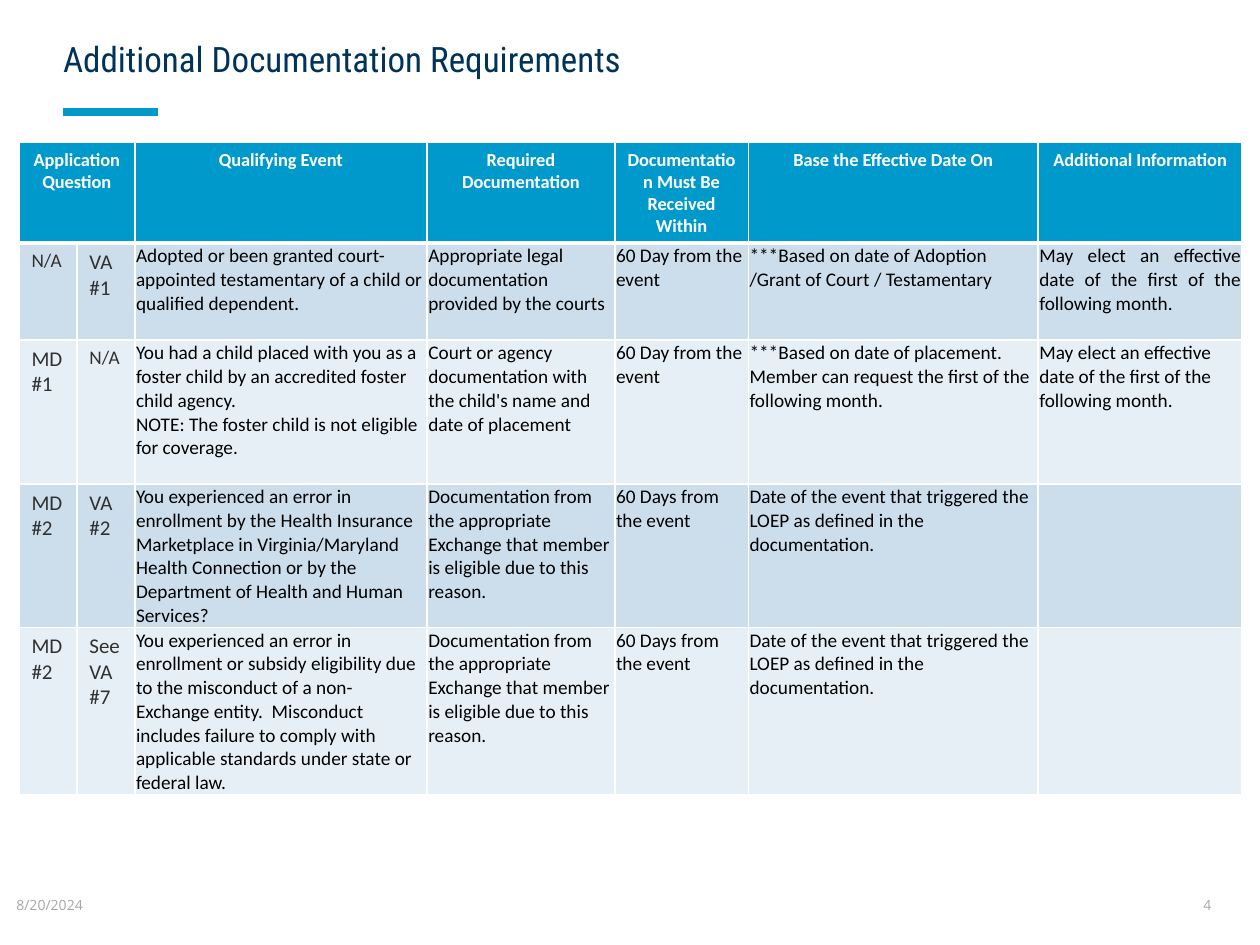
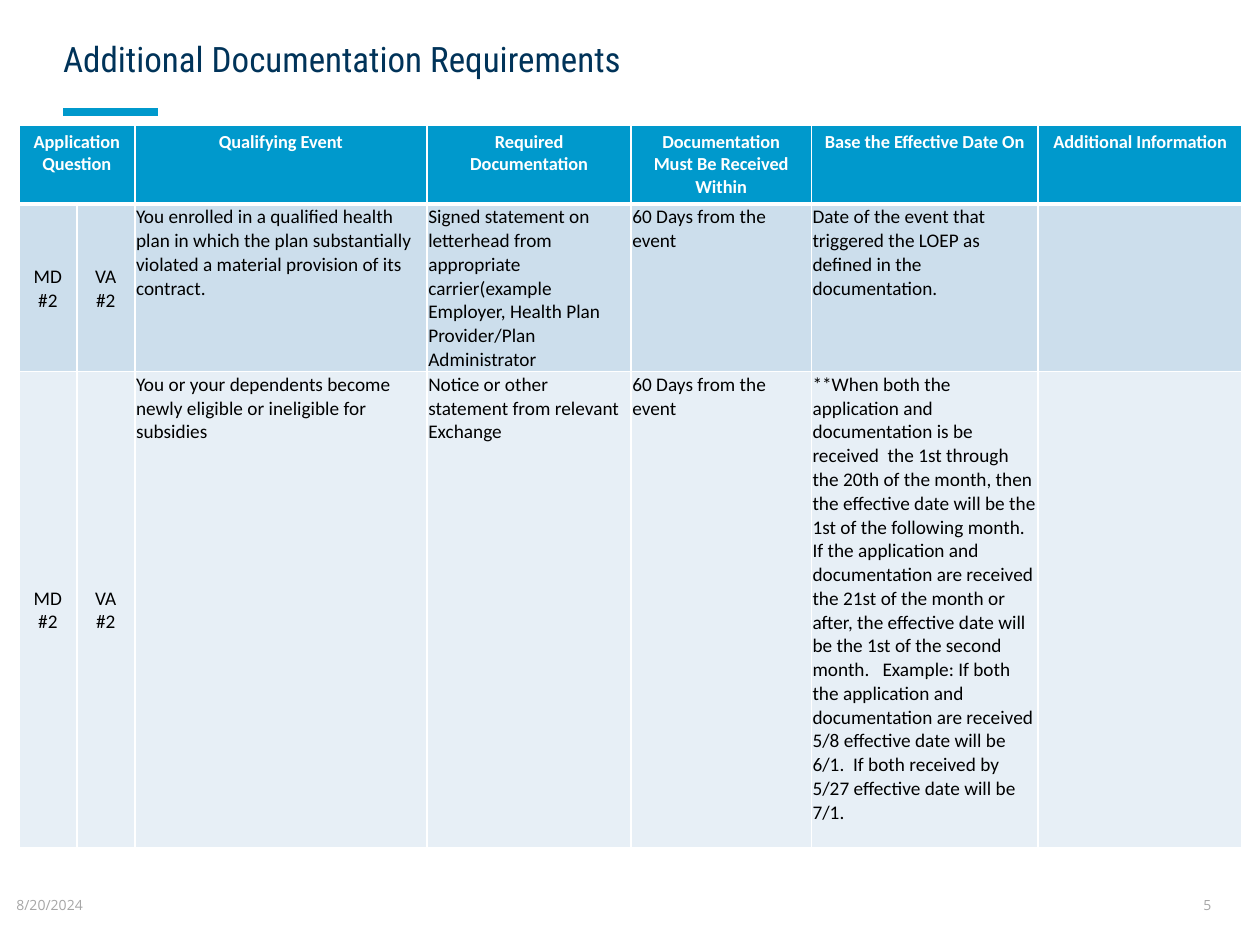
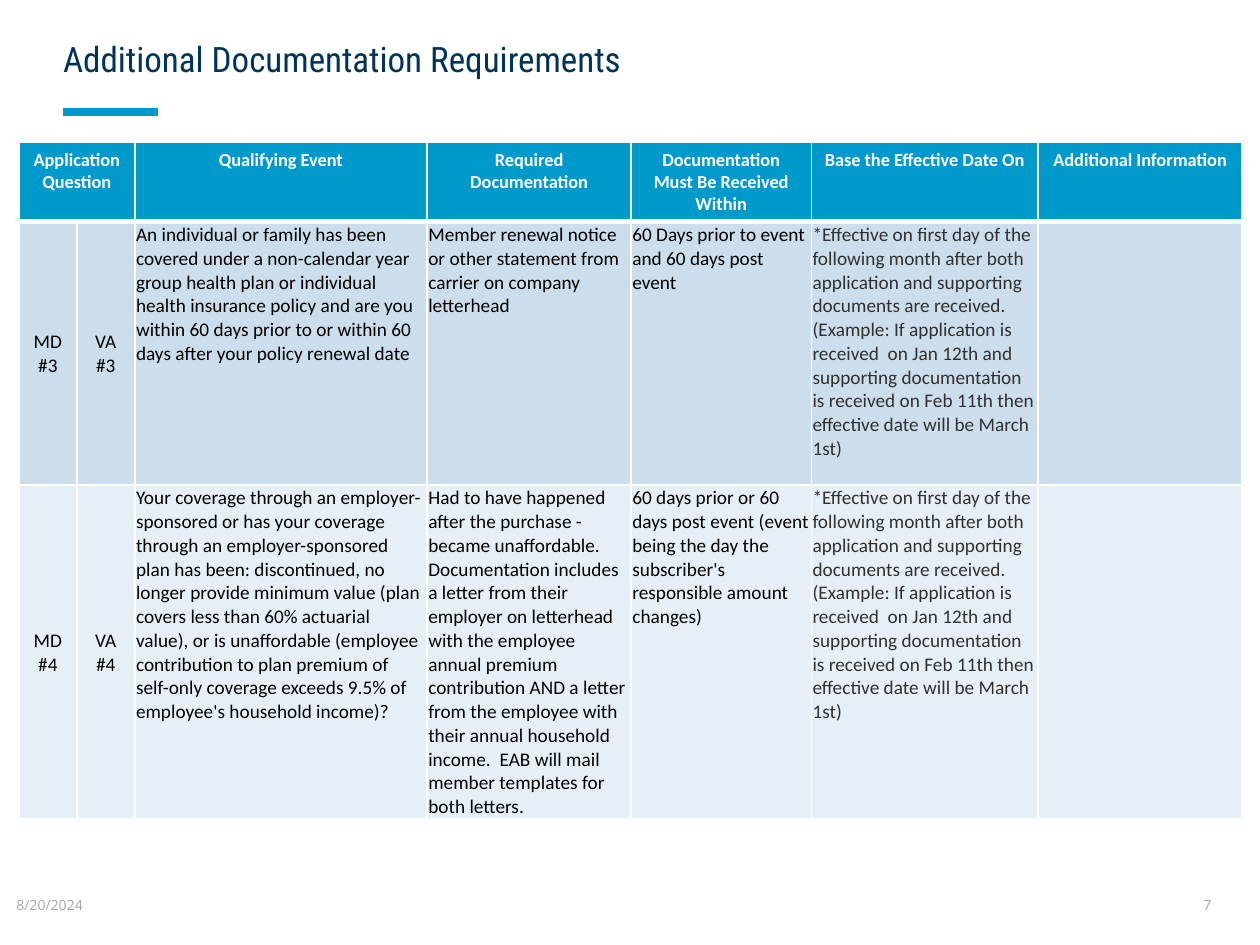
"""Build the three documentation requirement slides."""
from dataclasses import dataclass
from typing import NamedTuple, Optional

from lxml.etree import SubElement
from pptx import Presentation
from pptx.dml.color import RGBColor
from pptx.enum.shapes import MSO_CONNECTOR
from pptx.enum.text import MSO_ANCHOR as ANCHOR, MSO_AUTO_SIZE, PP_ALIGN as ALIGN
from pptx.oxml.ns import qn
from pptx.util import Inches, Pt

WHITE = RGBColor(0xFF, 0xFF, 0xFF)
BLACK = RGBColor(0x00, 0x00, 0x00)
CHARCOAL = RGBColor(0x30, 0x30, 0x30)
GREY = RGBColor(0xA6, 0xA6, 0xA6)
NAVY = RGBColor(0x00, 0x33, 0x59)
BLUE = RGBColor(0x00, 0x99, 0xCC)
BANDS = (RGBColor(0xCC, 0xDE, 0xEC), RGBColor(0xE7, 0xEF, 0xF6))

TITLE = "Additional Documentation Requirements"
DATE = "8/20/2024"
HEADINGS = ("Application Question", "", "Qualifying Event", "Required Documentation",
            "Documentation Must Be Received Within", "Base the Effective Date On",
            "Additional Information")
TABLE_LEFT = 0.15


@dataclass(frozen=True)
class Style:
    """Look of the text in a table cell."""
    size: float = 11
    color: RGBColor = BLACK
    bold: bool = False
    align: ALIGN = ALIGN.LEFT
    anchor: ANCHOR = ANCHOR.TOP
    tight: bool = True


HEADER = Style(10.5, WHITE, True, ALIGN.CENTER, tight=False)
BODY = Style()
NOTE = Style(color=CHARCOAL)
JUSTIFIED = Style(align=ALIGN.JUSTIFY)
CODE = Style(12, CHARCOAL, tight=False)
SMALL_CODE = Style(11, CHARCOAL, tight=False)
CENTRED_CODE = Style(align=ALIGN.CENTER, anchor=ANCHOR.MIDDLE)


class Entry(NamedTuple):
    """Cell text with its own style, or the style of its column."""
    text: str
    style: Optional[Style] = None


class Sheet(NamedTuple):
    """One slide: page number, table geometry in inches and entries."""
    number: int
    top: float
    widths: tuple[float, ...]
    heights: tuple[float, ...]
    code_style: Style
    rows: tuple[tuple[Entry, ...], ...]


def row(*items: str | Entry) -> tuple[Entry, ...]:
    """Turn plain strings into entries."""
    return tuple(i if isinstance(i, Entry) else Entry(i) for i in items)


NOT_APPLICABLE = Entry("N/A", SMALL_CODE)
EXCHANGE_PROOF = "Documentation from the appropriate Exchange that member is eligible due to this reason."
TRIGGER_DATE = "Date of the event that triggered the LOEP as defined in the documentation."
NEXT_MONTH = "May elect an effective date of the first of the following month."
SIXTY_DAY = "60 Day from the event"
SIXTY_DAYS = "60 Days from the event"
BOTH_RECEIVED = Entry(
    "*Effective on first day of the following month after both application and supporting "
    "documents are received. (Example: If application is received  on Jan 12th and supporting "
    "documentation is received on Feb 11th then effective date will be March 1st)", NOTE)

WIDE_DATE = (0.46, 0.46, 2.32, 1.49, 1.06, 2.3, 1.62)
EVEN = (0.46, 0.46, 2.32, 1.62, 1.43, 1.8, 1.62)

SHEETS = (
    Sheet(4, 1.13, WIDE_DATE, (0.8, 0.77, 1.14, 1.14, 1.33), CODE, (
        row(NOT_APPLICABLE, "VA #1",
            "Adopted or been granted court-appointed testamentary of a child or qualified dependent.",
            "Appropriate legal documentation provided by the courts", SIXTY_DAY,
            "***Based on date of Adoption /Grant of Court / Testamentary",
            Entry(NEXT_MONTH, JUSTIFIED)),
        row("MD #1", NOT_APPLICABLE,
            "You had a child placed with you as a foster child by an accredited foster child "
            "agency.\nNOTE: The foster child is not eligible for coverage.",
            "Court or agency documentation with the child's name and date of placement", SIXTY_DAY,
            "***Based on date of placement.  Member can request the first of the following month.",
            NEXT_MONTH),
        row("MD #2", "VA #2",
            "You experienced an error in enrollment by the Health Insurance Marketplace in "
            "Virginia/Maryland Health Connection or by the Department of Health and Human Services?",
            EXCHANGE_PROOF, SIXTY_DAYS, TRIGGER_DATE, ""),
        row("MD #2", "See VA #7",
            "You experienced an error in enrollment or subsidy eligibility due to the misconduct "
            "of a non-Exchange entity.  Misconduct includes failure to comply with applicable "
            "standards under state or federal law.",
            EXCHANGE_PROOF, SIXTY_DAYS, TRIGGER_DATE, ""),
    )),
    Sheet(5, 0.99, EVEN, (0.63, 1.33, 3.78), CENTRED_CODE, (
        row("MD\n#2", "VA\n#2",
            "You enrolled in a qualified health plan in which the plan substantially violated a "
            "material provision of its contract.",
            "Signed statement on letterhead from appropriate carrier(example Employer, Health "
            "Plan Provider/Plan Administrator", SIXTY_DAYS, TRIGGER_DATE, ""),
        row("MD\n#2", "VA\n#2",
            "You or your dependents become newly eligible or ineligible for subsidies",
            "Notice or other statement from relevant Exchange", SIXTY_DAYS,
            "**When both the application and documentation is be received  the 1st through the "
            "20th of the month, then the effective date will be the 1st of the following month.  "
            "If the application and documentation are received the 21st of the month or after, "
            "the effective date will be the 1st of the second month.   Example: If both the "
            "application and documentation are received 5/8 effective date will be 6/1.  If both "
            "received by 5/27 effective date will be 7/1.", ""),
    )),
    Sheet(7, 1.13, EVEN, (0.63, 2.09, 2.65), CENTRED_CODE, (
        row("MD\n#3", "VA\n#3",
            "An individual or family has been covered under a non-calendar year group health plan "
            "or individual health insurance policy and are you within 60 days prior to or within "
            "60 days after your policy renewal date",
            "Member renewal notice or other statement from carrier on company letterhead",
            "60 Days prior to event and 60 days post event", BOTH_RECEIVED, ""),
        row("MD\n#4", "VA\n#4",
            "Your coverage through an employer-sponsored or has your coverage through an "
            "employer-sponsored plan has been: discontinued, no longer provide minimum value "
            "(plan covers less than 60% actuarial value), or is unaffordable (employee "
            "contribution to plan premium of self-only coverage exceeds 9.5% of employee's "
            "household income)?",
            "Had to have happened after the purchase - became unaffordable. Documentation "
            "includes a letter from their employer on letterhead with the employee annual premium "
            "contribution AND a letter from the employee with their annual household income.  EAB "
            "will mail member templates for both letters.",
            "60 days prior or 60 days post event (event being the day the subscriber's "
            "responsible amount changes)", BOTH_RECEIVED, ""),
    )),
)


def add_run(p, text: str, font: str, size: float, color: RGBColor, bold: bool = False) -> None:
    """Append a formatted run to a paragraph."""
    r = p.add_run()
    r.text = text
    r.font.name, r.font.size, r.font.bold = font, Pt(size), bold
    r.font.color.rgb = color


def set_margins(frame, left: float, top: float, right: float, bottom: float) -> None:
    """Set the insets of a text frame or a cell."""
    frame.margin_left, frame.margin_top = Inches(left), Inches(top)
    frame.margin_right, frame.margin_bottom = Inches(right), Inches(bottom)


def add_title(slide) -> None:
    """Fill the title placeholder and draw the accent line below it."""
    sp = slide.shapes.title
    sp.left, sp.top, sp.width, sp.height = Inches(0.5), Inches(0), Inches(6.75), Inches(0.87)
    tf = sp.text_frame
    tf.auto_size, tf.vertical_anchor = MSO_AUTO_SIZE.NONE, ANCHOR.MIDDLE
    set_margins(tf, 0, 0.3, 0, 0.2)
    p = tf.paragraphs[0]
    p.alignment, p.line_spacing = ALIGN.LEFT, 0.9
    add_run(p, TITLE, "Roboto Condensed", 20, NAVY)
    line = slide.shapes.add_connector(MSO_CONNECTOR.STRAIGHT, Inches(0.5), Inches(0.89),
                                      Inches(1.25), Inches(0.89))
    line.line.color.rgb, line.line.width = BLUE, Pt(4.5)
    SubElement(line._element.spPr, qn("a:effectLst"))


def add_footer(slide, text: str, left: float, width: float, wrap: bool) -> None:
    """Add one small footer text."""
    sp = slide.shapes.add_textbox(Inches(left), Inches(6.98), Inches(width), Inches(0.4))
    tf = sp.text_frame
    tf.word_wrap, tf.vertical_anchor = wrap, ANCHOR.MIDDLE
    set_margins(tf, 0, 0.05, 0, 0.05)
    add_run(tf.paragraphs[0], text, "Open Sans", 8, GREY)


def set_borders(cell, bottom: float) -> None:
    """Draw white borders, with a bottom one of the given width."""
    for side, width in (("L", 1), ("R", 1), ("T", 1), ("B", bottom)):
        ln = SubElement(cell._tc.get_or_add_tcPr(), qn(f"a:ln{side}"), w=str(Pt(width)))
        SubElement(SubElement(ln, qn("a:solidFill")), qn("a:srgbClr"), val=str(WHITE))


def fill_cell(cell, text: str, style: Style, fill: RGBColor, bottom: float = 1) -> None:
    """Format a cell and write its paragraphs."""
    set_borders(cell, bottom)
    cell.fill.solid()
    cell.fill.fore_color.rgb = fill
    if not text:
        return
    cell.vertical_anchor = style.anchor
    if style.tight:
        set_margins(cell, 0.01, 0.01, 0.01, 0)
    tf = cell.text_frame
    for i, part in enumerate(text.split("\n")):
        p = tf.add_paragraph() if i else tf.paragraphs[0]
        p.alignment = style.align
        add_run(p, part, "Calibri", style.size, style.color, style.bold)


def add_requirements(slide, sheet: Sheet) -> None:
    """Add the requirements table."""
    table = slide.shapes.add_table(
        len(sheet.heights), len(sheet.widths), Inches(TABLE_LEFT), Inches(sheet.top),
        Inches(sum(sheet.widths)), Inches(sum(sheet.heights))).table
    for column, width in zip(table.columns, sheet.widths):
        column.width = Inches(width)
    for table_row, height in zip(table.rows, sheet.heights):
        table_row.height = Inches(height)
    table.cell(0, 0).merge(table.cell(0, 1))
    for c, heading in enumerate(HEADINGS):
        fill_cell(table.cell(0, c), heading, HEADER, BLUE, bottom=3)
    for n, entries in enumerate(sheet.rows):
        for c, entry in enumerate(entries):
            style = entry.style or (sheet.code_style if c < 2 else BODY)
            fill_cell(table.cell(n + 1, c), entry.text, style, BANDS[n % 2])


def main() -> None:
    """Build and save the presentation."""
    prs = Presentation()
    prs.slide_width, prs.slide_height = Inches(10), Inches(7.5)
    for sheet in SHEETS:
        slide = prs.slides.add_slide(prs.slide_layouts[5])
        add_title(slide)
        add_footer(slide, DATE, 0.13, 0.73, wrap=False)
        add_footer(slide, str(sheet.number), 9.55, 0.27, wrap=True)
        add_requirements(slide, sheet)
    prs.save("out.pptx")


if __name__ == "__main__":
    main()
